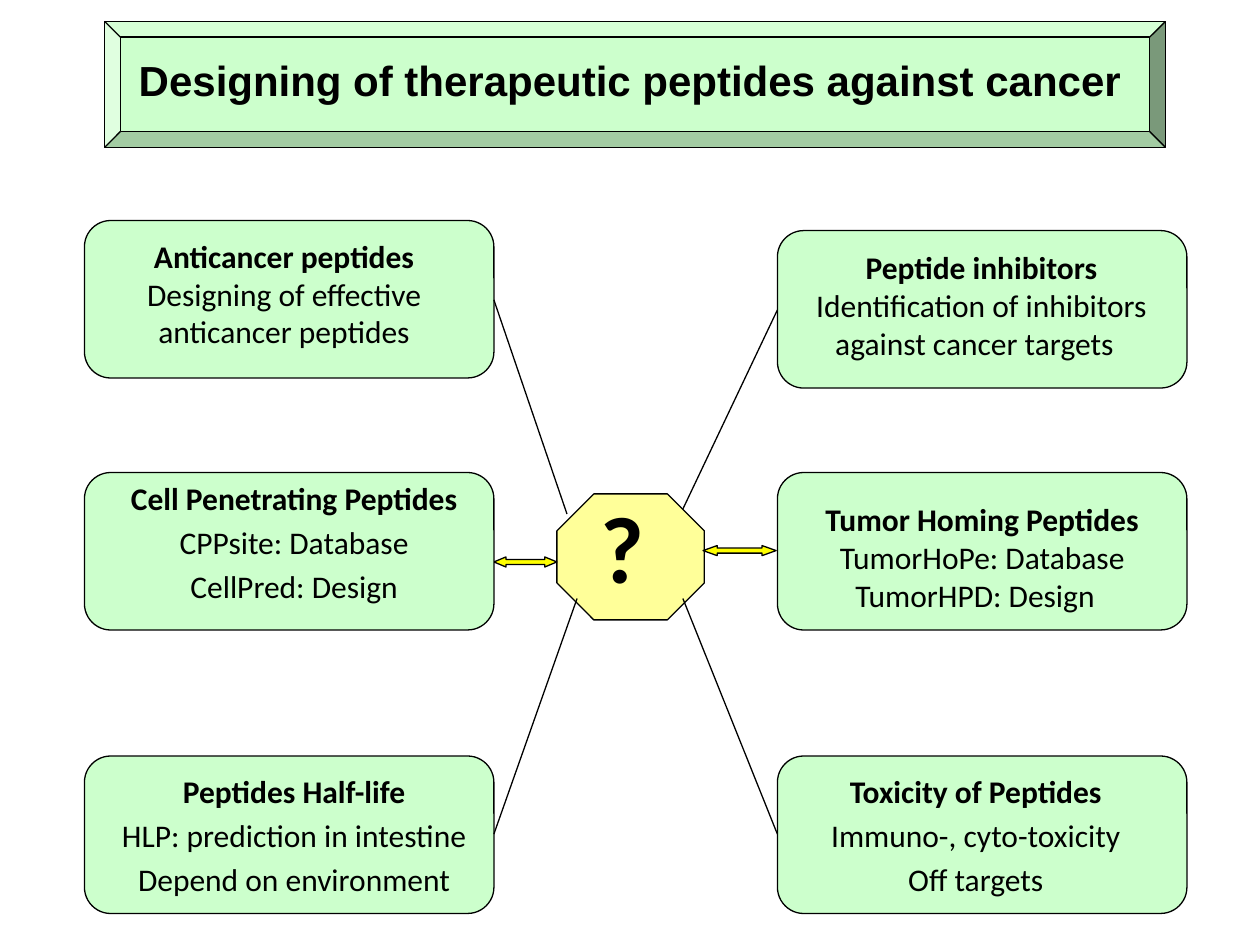
"""Build the slide on designing therapeutic peptides against cancer."""
from lxml.etree import SubElement
from pptx import Presentation
from pptx.dml.color import RGBColor
from pptx.enum.shapes import MSO_CONNECTOR, MSO_SHAPE
from pptx.enum.text import MSO_ANCHOR, PP_ALIGN
from pptx.oxml.ns import qn
from pptx.util import Inches, Pt


def rgb(value):
    return RGBColor.from_string(value)


def add_text(box, paragraphs, size, font="Calibri", align=PP_ALIGN.CENTER, anchor=MSO_ANCHOR.TOP):
    tf = s.shapes.add_textbox(*map(Inches, box)).text_frame
    tf.word_wrap = True
    tf.vertical_anchor = anchor
    for i, runs in enumerate(paragraphs):
        p = tf.paragraphs[0] if i == 0 else tf.add_paragraph()
        p.alignment = align
        p.space_before = Pt(3.6 if i else 0)
        for text, bold in runs:
            r = p.add_run()
            r.text = text
            for name, value in {"name": font, "size": Pt(size), "bold": bold}.items():
                setattr(r.font, name, value)
            r.font.color.rgb = rgb("000000")


prs = Presentation()
prs.slide_width, prs.slide_height = Inches(10), Inches(7.5)
s = prs.slides.add_slide(prs.slide_layouts[6])

GREEN, PALE_YELLOW, YELLOW = "CCFFCC", "FFFF99", "FFFF00"
LEFT, RIGHT, CARD_W, CARD_H = 0.67, 6.17, 3.25, 1.25

shapes = [
    (MSO_SHAPE.BEVEL, (0.83, 0.17, 8.42, 1), GREEN, [0.125]),
    (MSO_SHAPE.OCTAGON, (4.42, 3.92, 1.17, 1), PALE_YELLOW, [0.293]),
    (MSO_SHAPE.LEFT_RIGHT_ARROW, (3.92, 4.42, 0.5, 0.08), YELLOW, [0.5, 1.2]),
    (MSO_SHAPE.LEFT_RIGHT_ARROW, (5.58, 4.33, 0.58, 0.08), YELLOW, [0.5, 1.4]),
]
for left, tops in ((LEFT, (1.75, 3.75, 6)), (RIGHT, (1.83, 3.75, 6))):
    for top in tops:
        shapes.append((MSO_SHAPE.ROUNDED_RECTANGLE, (left, top, CARD_W, CARD_H), GREEN, [0.167]))

for kind, box, fill, adjustments in shapes:
    sp = s.shapes.add_shape(kind, *map(Inches, box))
    sp.shadow.inherit = False
    sp.fill.solid()
    sp.fill.fore_color.rgb = rgb(fill)
    sp.line.color.rgb = rgb("000000")
    sp.line.width = Pt(0.75)
    for i, value in enumerate(adjustments):
        sp.adjustments[i] = value

spokes = [
    (3.92, 6.62, 4.58, 4.75),
    (5.42, 4.04, 6.17, 2.46),
    (4.5, 4.08, 3.92, 2.38),
    (6.17, 6.62, 5.42, 4.75),
]
for ends in spokes:
    line = s.shapes.add_connector(MSO_CONNECTOR.STRAIGHT, *map(Inches, ends))
    line.line.color.rgb = rgb("000000")
    line.line.width = Pt(0.75)
    SubElement(line._element.spPr, qn("a:effectLst"))

add_text((0.5, 0.17, 9, 0.92), [[("Designing of therapeutic peptides against cancer", True)]],
         24, font="Arial", anchor=MSO_ANCHOR.MIDDLE)
add_text((4.67, 3.83, 0.75, 1.01), [[("?", True)]], 54, align=PP_ALIGN.LEFT)

flowing_cards = [
    ((0.67, 1.83, 3.17, 1), "Anticancer peptides ", "Designing of effective anticancer peptides"),
    ((6.25, 1.92, 3.08, 1), "Peptide inhibitors ", "Identification of inhibitors against cancer targets  "),
    ((6.17, 3.92, 3.25, 1), "Tumor Homing Peptides ", "TumorHoPe: Database TumorHPD: Design  "),
]
for box, heading, body in flowing_cards:
    add_text(box, [[(heading, True), (body, False)]], 18)

listed_cards = [
    ((0.67, 3.75, 3.33, 1.13), "Cell Penetrating Peptides", "CPPsite: Database", "CellPred: Design"),
    ((0.67, 6.08, 3.33, 1.13), "Peptides Half-life", "HLP: prediction in intestine", "Depend on environment"),
    ((6.08, 6.08, 3.33, 1.13), "Toxicity of Peptides", "Immuno-, cyto-toxicity", "Off targets"),
]
for box, heading, *items in listed_cards:
    add_text(box, [[(heading, True)]] + [[(item, False)] for item in items], 18)

prs.save("out.pptx")
